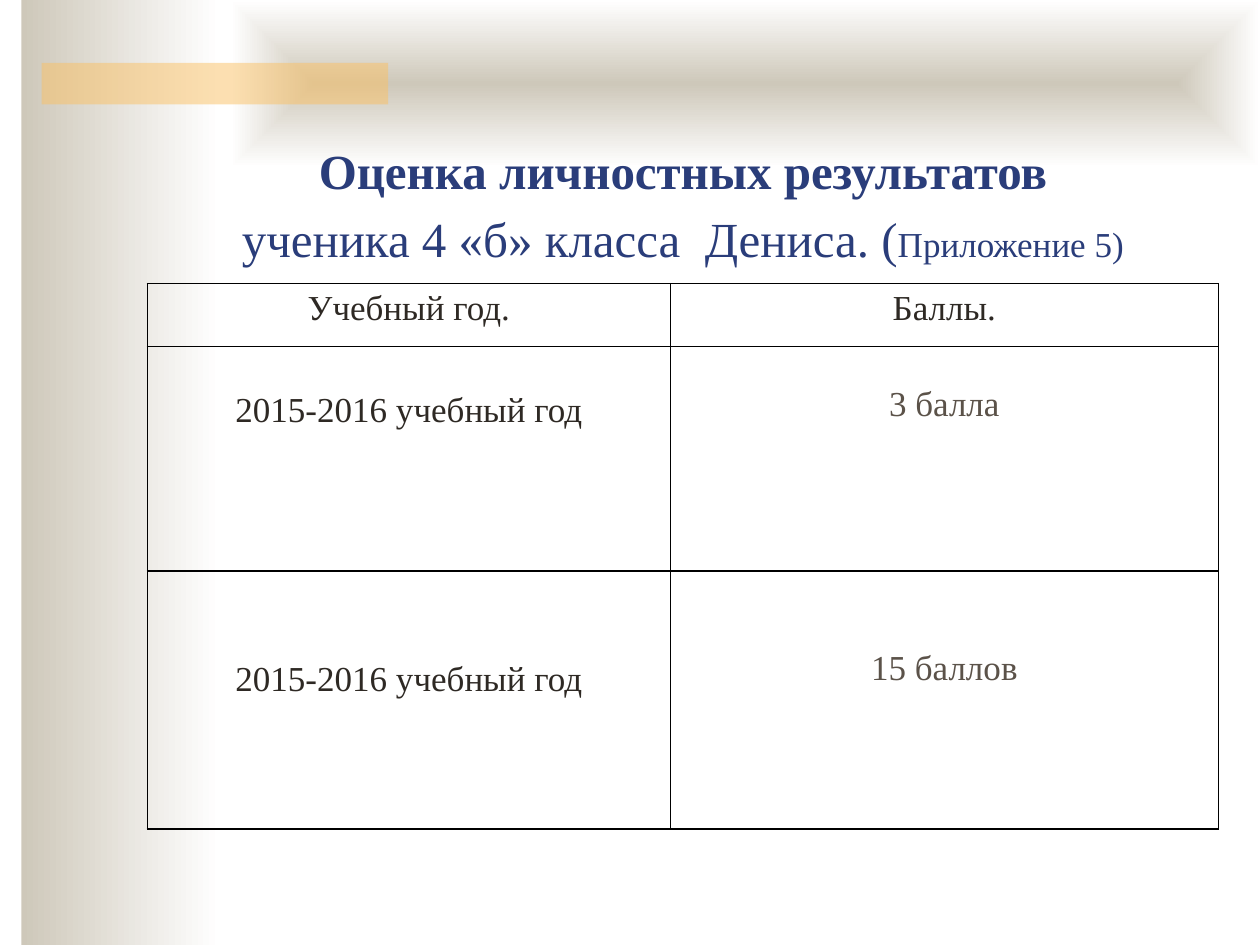
from lxml.etree import SubElement
from pptx import Presentation
from pptx.dml.color import RGBColor
from pptx.enum.shapes import MSO_SHAPE
from pptx.enum.text import MSO_ANCHOR, PP_ALIGN
from pptx.oxml import parse_xml
from pptx.oxml.ns import nsdecls, qn
from pptx.util import Inches, Pt

FONT = "Times New Roman"
SAND = RGBColor(0xCE, 0xC8, 0xBA)
WHITE = RGBColor(0xFF, 0xFF, 0xFF)
AMBER = RGBColor(0xFA, 0xC1, 0x64)
NAVY = RGBColor(0x2A, 0x3D, 0x7A)
DARK = RGBColor(0x2E, 0x29, 0x24)
BROWN = RGBColor(0x5B, 0x52, 0x49)
BORDER = RGBColor(0, 0, 0)

COLUMN_WIDTHS = [4.15, 4.35]
ROW_HEIGHTS = [0.5, 1.78, 2.05]
# Each cell: text, colour, line spacing, top margin in inches
ROWS = [
    [("Учебный год.", DARK, 1.15, 0), ("Баллы.", DARK, 1.15, 0)],
    [("2015-2016 учебный год", DARK, 1.15, 0.31), ("3 балла", BROWN, 1.0, 0.31)],
    [("2015-2016 учебный год", DARK, 1.15, 0.66), ("15 баллов", BROWN, 1.0, 0.62)],
]


class SlideBuilder:
    """Holds the text style and the current slide."""

    def __init__(self, slide, font_name):
        self.slide = slide
        self.font_name = font_name

    def style_run(self, run, size, color, bold=False):
        run.font.name = self.font_name
        run.font.size = Pt(size)
        run.font.color.rgb = color
        run.font.bold = bold

    def rectangle(self, left, top, width, height):
        shape = self.slide.shapes.add_shape(
            MSO_SHAPE.RECTANGLE, Inches(left), Inches(top), Inches(width), Inches(height))
        shape.shadow.inherit = False
        shape.line.fill.background()
        return shape

    def gradient_band(self, left, top, width, height, from_center=False):
        """Fade sand to white, left to right or from the centre outwards."""
        shape = self.rectangle(left, top, width, height)
        shape.fill.gradient()
        shape.fill.gradient_angle = 0
        for stop, color, position in zip(shape.fill.gradient_stops, (SAND, WHITE), (0, 1)):
            stop.color.rgb = color
            stop.position = position
        if from_center:
            linear = shape._element.spPr.find(".//" + qn("a:lin"))
            linear.getparent().replace(linear, parse_xml(
                f'<a:path {nsdecls("a")} path="shape">'
                '<a:fillToRect l="50000" t="50000" r="50000" b="50000"/></a:path>'))

    def translucent_bar(self, left, top, width, height, color, opacity):
        shape = self.rectangle(left, top, width, height)
        shape.fill.solid()
        shape.fill.fore_color.rgb = color
        color_element = shape._element.spPr.find(".//" + qn("a:srgbClr"))
        SubElement(color_element, qn("a:alpha"), val=str(opacity * 1000))

    def title(self, left, top, width, height, lines):
        """Draw lines of (text, size, bold) runs in one centred paragraph."""
        box = self.slide.shapes.add_textbox(
            Inches(left), Inches(top), Inches(width), Inches(height))
        frame = box.text_frame
        frame.word_wrap = True
        frame.vertical_anchor = MSO_ANCHOR.BOTTOM
        paragraph = frame.paragraphs[0]
        paragraph.alignment = PP_ALIGN.CENTER
        paragraph.line_spacing = 1.15
        for index, line in enumerate(lines):
            if index:
                paragraph.add_line_break()
            for text, size, bold in line:
                run = paragraph.add_run()
                run.text = text
                self.style_run(run, size, NAVY, bold)

    def border_cell(self, cell):
        properties = cell._tc.get_or_add_tcPr()
        for side in ("lnL", "lnR", "lnT", "lnB"):
            line = SubElement(properties, qn(f"a:{side}"), w=str(Pt(1)))
            fill = SubElement(line, qn("a:solidFill"))
            SubElement(fill, qn("a:srgbClr"), val=str(BORDER))

    def fill_cell(self, cell, text, color, spacing, margin_top):
        cell.margin_left = cell.margin_right = Inches(0.06)
        cell.margin_top = Inches(margin_top)
        cell.margin_bottom = 0
        self.border_cell(cell)
        cell.fill.background()
        cell.text_frame.text = text
        paragraph = cell.text_frame.paragraphs[0]
        paragraph.alignment = PP_ALIGN.CENTER
        paragraph.line_spacing = spacing
        self.style_run(paragraph.runs[0], 20, color)

    def table(self, left, top, widths, heights, rows):
        table = self.slide.shapes.add_table(
            len(heights), len(widths), Inches(left), Inches(top),
            Inches(sum(widths)), Inches(sum(heights))).table
        table.first_row = table.horz_banding = False
        for column, width in zip(table.columns, widths):
            column.width = Inches(width)
        for row, height, contents in zip(table.rows, heights, rows):
            row.height = Inches(height)
            for cell, content in zip(row.cells, contents):
                self.fill_cell(cell, *content)


def main():
    presentation = Presentation()
    presentation.slide_width = Inches(10)
    presentation.slide_height = Inches(7.5)
    slide = presentation.slides.add_slide(presentation.slide_layouts[6])
    builder = SlideBuilder(slide, FONT)
    builder.gradient_band(0.17, 0, 1.58, 7.5)
    builder.gradient_band(1.83, 0, 8.17, 1.33, from_center=True)
    builder.translucent_bar(0.33, 0.5, 2.75, 0.33, AMBER, 50)
    builder.title(1.17, 0.92, 8.5, 1.25, [
        [("Оценка личностных результатов", 28, True)],
        [("ученика 4 «б» класса  Дениса. (", 28, False), ("Приложение 5)", 20, False)],
    ])
    builder.table(1.17, 2.25, COLUMN_WIDTHS, ROW_HEIGHTS, ROWS)
    presentation.save("out.pptx")


if __name__ == "__main__":
    main()
